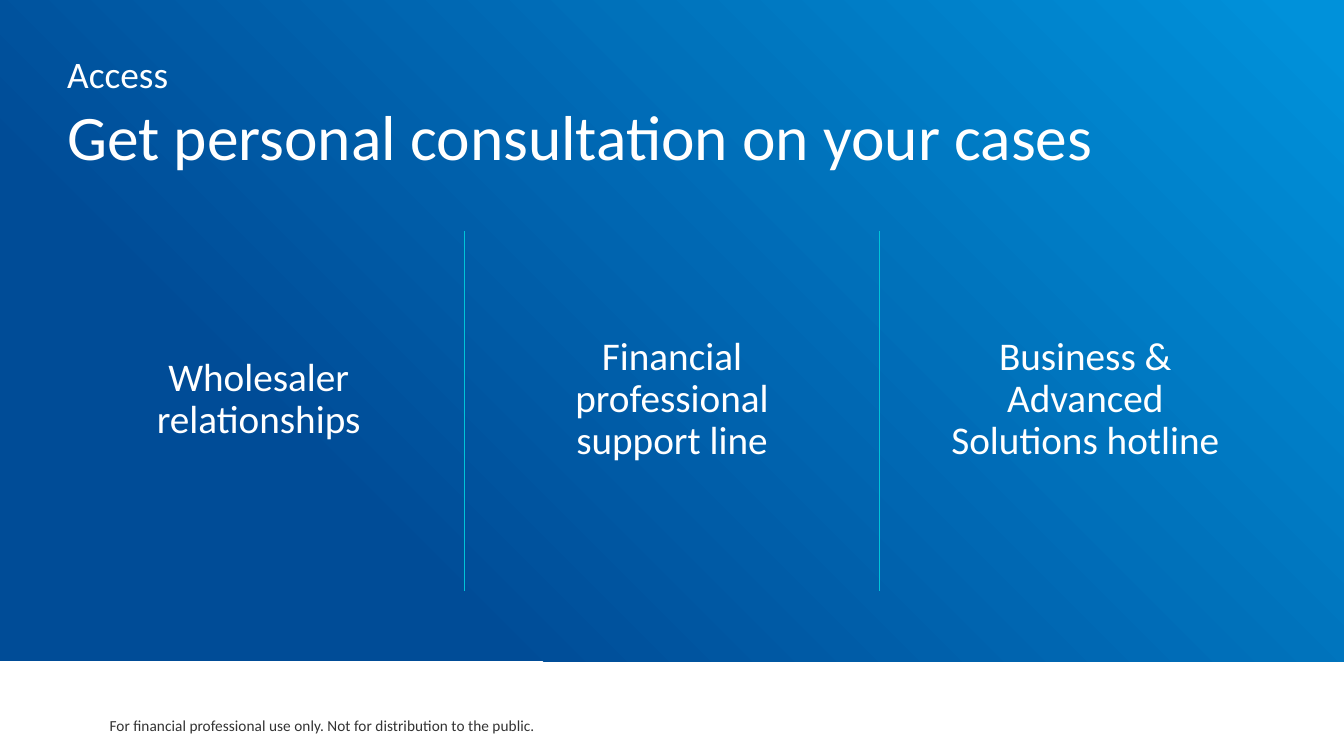
from lxml.etree import SubElement
from pptx import Presentation
from pptx.dml.color import RGBColor
from pptx.enum.shapes import MSO_CONNECTOR, MSO_SHAPE
from pptx.enum.text import MSO_ANCHOR, PP_ALIGN
from pptx.oxml.ns import qn
from pptx.util import Inches, Pt

NAVY = RGBColor(0x00, 0x4C, 0x97)
SKY = RGBColor(0x00, 0x91, 0xDA)
TURQUOISE = RGBColor(0x00, 0xC4, 0xD9)
WHITE = RGBColor(0xFF, 0xFF, 0xFF)
CHARCOAL = RGBColor(0x33, 0x33, 0x33)


class SlideBuilder:
    font_name = "Calibri"

    def __init__(self, presentation):
        self.width = presentation.slide_width
        self.height = presentation.slide_height
        self.slide = presentation.slides.add_slide(presentation.slide_layouts[6])

    def x(self, percent):
        return round(self.width * percent / 100)

    def y(self, percent):
        return round(self.height * percent / 100)

    def box(self, left, top, width, height):
        return self.x(left), self.y(top), self.x(width), self.y(height)

    def gradient_panel(self, place, stops, angle):
        shape = self.slide.shapes.add_shape(MSO_SHAPE.RECTANGLE, *self.box(*place))
        shape.shadow.inherit = False
        shape.line.fill.background()
        shape.fill.gradient()
        shape.fill.gradient_angle = angle
        for stop, (position, color) in zip(shape.fill.gradient_stops, stops):
            stop.position = position
            stop.color.rgb = color

    def text(self, place, lines, color=WHITE, align=PP_ALIGN.CENTER,
             anchor=MSO_ANCHOR.MIDDLE, insets=(0, 0, 0, 0), spacing=1.0, gap=0):
        frame = self.slide.shapes.add_textbox(*self.box(*place)).text_frame
        frame.word_wrap = True
        frame.vertical_anchor = anchor
        (frame.margin_left, frame.margin_top,
         frame.margin_right, frame.margin_bottom) = map(Inches, insets)
        for index, (words, size) in enumerate(lines):
            paragraph = frame.add_paragraph() if index else frame.paragraphs[0]
            paragraph.alignment = align
            paragraph.line_spacing = spacing
            if index:
                paragraph.space_before = Pt(gap)
            run = paragraph.add_run()
            run.text = words
            run.font.name = self.font_name
            run.font.size = Pt(size)
            run.font.color.rgb = color

    def divider(self, column, top, bottom):
        connector = self.slide.shapes.add_connector(
            MSO_CONNECTOR.STRAIGHT,
            self.x(column), self.y(top), self.x(column), self.y(bottom))
        connector.line.color.rgb = TURQUOISE
        connector.line.width = Pt(0.75)
        SubElement(connector._element.spPr, qn("a:effectLst"))


def main():
    presentation = Presentation()
    presentation.slide_width = Inches(10)
    presentation.slide_height = presentation.slide_width * 9 // 16
    builder = SlideBuilder(presentation)

    builder.gradient_panel((0, 0, 100, 87.5), [(0.25, NAVY), (0.98, SKY)], 45)

    services = ["Wholesaler relationships",
                "Financial professional support line",
                "Business & Advanced Solutions hotline"]
    margin, column_width = 5, 28.5
    pitch = (100 - 2 * margin - column_width) / (len(services) - 1)
    for index, service in enumerate(services):
        builder.text((margin + index * pitch, 25.4, column_width, 52.3),
                     [(service, 21)], insets=(0.3, 0.45, 0.3, 0.3), spacing=0.9)
    for column in (34.54, 65.46):
        builder.divider(column, 30.6, 78.2)

    builder.text((margin, 7.9, 100 - 2 * margin, 15.1),
                 [("Access", 20), ("Get personal consultation on your cases", 34)],
                 align=PP_ALIGN.LEFT, anchor=MSO_ANCHOR.TOP, spacing=0.8, gap=8.5)
    builder.text((-5.1, 94.6, 58.2, 2.7),
                 [("For financial professional use only. "
                   "Not for distribution to the public.", 8.25)], color=CHARCOAL)

    presentation.save("out.pptx")


if __name__ == "__main__":
    main()
